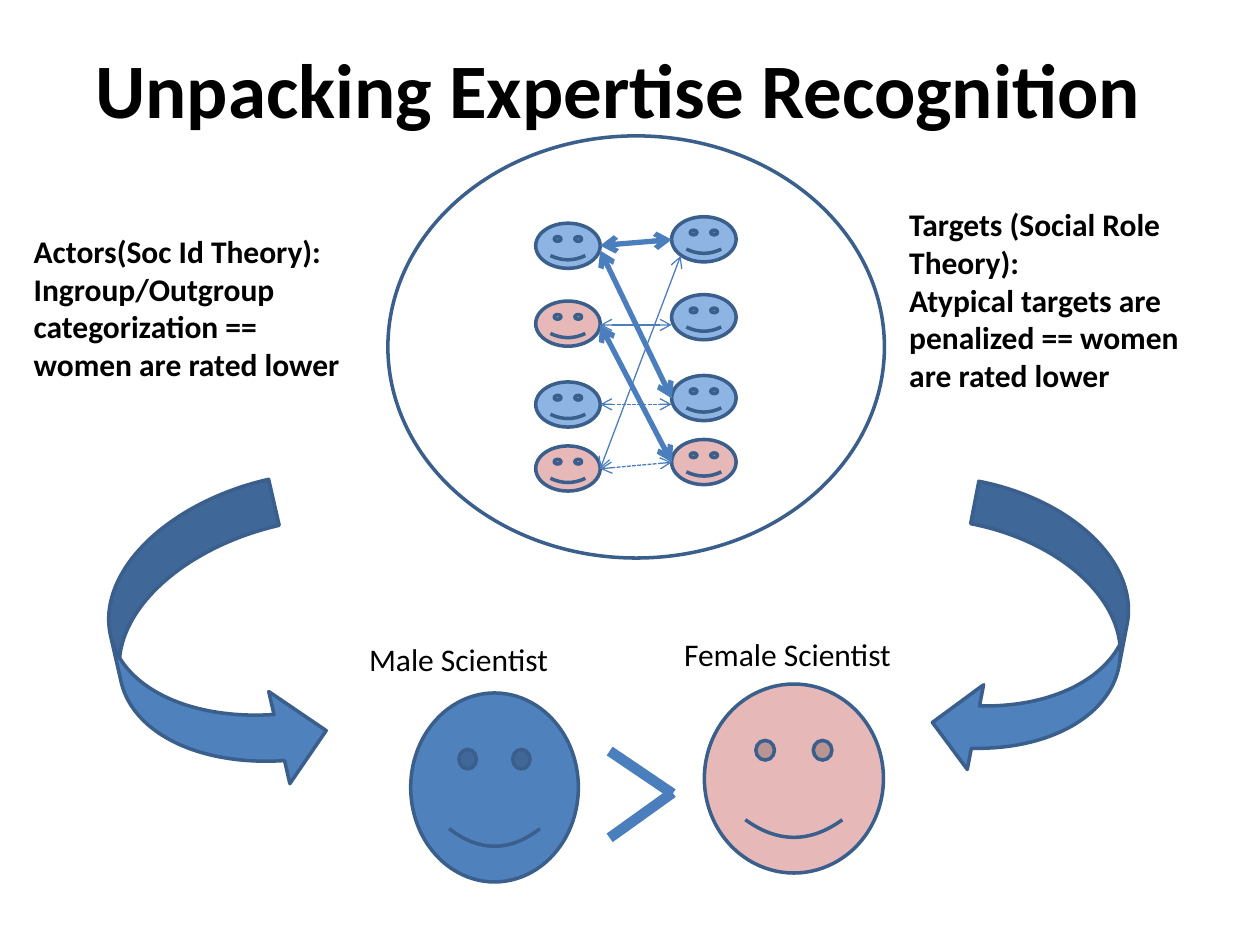
from dataclasses import dataclass

from pptx import Presentation
from pptx.dml.color import RGBColor
from pptx.enum.dml import MSO_LINE
from pptx.enum.shapes import MSO_CONNECTOR, MSO_SHAPE
from pptx.enum.text import MSO_ANCHOR, MSO_AUTO_SIZE, PP_ALIGN
from pptx.oxml.ns import qn
from pptx.util import Cm, Pt
from lxml import etree

OVAL = MSO_SHAPE.OVAL
SMILEY = MSO_SHAPE.SMILEY_FACE
RIGHT = MSO_SHAPE.CURVED_RIGHT_ARROW
LEFT = MSO_SHAPE.CURVED_LEFT_ARROW
STRAIGHT = MSO_CONNECTOR.STRAIGHT
DASH = MSO_LINE.SQUARE_DOT  # stored as sysDot; see SYS_DASH below
SYS_DASH = "sysDash"

BLACK = RGBColor(0x00, 0x00, 0x00)
BLUE = RGBColor(0x4F, 0x81, 0xBD)
SKY = RGBColor(0x8E, 0xB4, 0xE3)
PINK = RGBColor(0xE6, 0xB9, 0xB8)
EDGE = RGBColor(0x3A, 0x5F, 0x8C)
LINK = RGBColor(0x4B, 0x7E, 0xBC)
FONT = "Calibri"


@dataclass
class Box:
    x: float
    y: float
    w: float
    h: float

    def cm(self) -> tuple:
        return Cm(self.x), Cm(self.y), Cm(self.w), Cm(self.h)


@dataclass
class Tie:
    start: tuple
    end: tuple
    width: float
    dash: bool = False
    heads: bool = True


@dataclass
class Note:
    box: Box
    lines: list
    bold: bool = False
    wrap: bool = False


def add_run(para, text: str, size: float, bold: bool) -> None:
    run = para.add_run()
    run.text = text
    run.font.name = FONT
    run.font.size = Pt(size)
    run.font.bold = bold
    run.font.color.rgb = BLACK


def add_form(shapes, kind, box: Box, fill=None, turn: float = 0) -> None:
    form = shapes.add_shape(kind, *box.cm())
    form.shadow.inherit = False
    form.rotation = turn
    if fill is None:
        form.fill.background()
    else:
        form.fill.solid()
        form.fill.fore_color.rgb = fill
    form.line.color.rgb = EDGE
    form.line.width = Pt(2)


def add_tie(shapes, tie: Tie) -> None:
    ends = [Cm(v) for v in (*tie.start, *tie.end)]
    link = shapes.add_connector(STRAIGHT, *ends)
    link.line.color.rgb = LINK
    link.line.width = Pt(tie.width)
    if tie.dash:
        link.line.dash_style = DASH
    props = link._element.spPr
    line = props.find(qn("a:ln"))
    if tie.dash:
        line.find(qn("a:prstDash")).set("val", SYS_DASH)
    if tie.heads:
        for tag in ("a:headEnd", "a:tailEnd"):
            etree.SubElement(line, qn(tag)).set("type", "arrow")
    etree.SubElement(props, qn("a:effectLst"))


def add_note(shapes, note: Note) -> None:
    frame = shapes.add_textbox(*note.box.cm()).text_frame
    frame.word_wrap = note.wrap
    frame.auto_size = MSO_AUTO_SIZE.SHAPE_TO_FIT_TEXT
    for i, text in enumerate(note.lines):
        para = frame.add_paragraph() if i else frame.paragraphs[0]
        add_run(para, text, 18, note.bold)


# Network of raters: two columns of faces, the right one slightly higher
FACE_W, FACE_H = 1.3, 0.91
COL_A, COL_B = 10.8, 13.54
RISE = 0.13
ROWS = [4.5, 6.07, 7.7, 8.99]
FILLS_A = [SKY, PINK, SKY, PINK]
FILLS_B = [SKY, SKY, SKY, PINK]
EDGE_A = COL_A + FACE_W
THIN, THICK = 0.75, 3

TIES = [
    Tie((EDGE_A, 6.55), (COL_B, 6.55), THIN),
    Tie((EDGE_A, 5.05), (COL_B, 8.03), THICK),
    Tie((EDGE_A, 8.15), (COL_B, 8.15), THIN, dash=True),
    Tie((EDGE_A, 9.45), (13.72, 5.16), THIN),
    Tie((EDGE_A, 9.45), (COL_B, 9.32), THIN, dash=True),
    Tie((EDGE_A, 6.55), (COL_B, 9.32), THICK),
    Tie((EDGE_A, 4.95), (COL_B, 4.83), THICK),
]

# Greater-than sign between the two scientists
SIGN = [
    Tie((12.29, 15.14), (13.56, 16), 6, heads=False),
    Tie((13.56, 15.98), (12.29, 16.89), 6, heads=False),
]

NOTES = [
    Note(Box(0.43, 4.55, 6.78, 3.33),
         ["Actors(Soc Id Theory):",
          "Ingroup/Outgroup categorization == women are rated lower"],
         bold=True, wrap=True),
    Note(Box(7.19, 12.78, 4.32, 1.02), ["Male Scientist"]),
    Note(Box(13.54, 12.67, 4.88, 1.02), ["Female Scientist"]),
    Note(Box(18.08, 4.01, 6.68, 4.11),
         ["Targets (Social Role Theory):",
          "Atypical targets are penalized == women are rated lower"],
         bold=True, wrap=True),
]


def main() -> None:
    deck = Presentation()
    deck.slide_width, deck.slide_height = Cm(25.4), Cm(19.05)
    slide = deck.slides.add_slide(deck.slide_layouts[5])
    shapes = slide.shapes

    # Title
    title = shapes.title
    title.left, title.top, title.width, title.height = Box(
        1.27, 0.58, 22.4, 2.39).cm()
    title.text_frame.vertical_anchor = MSO_ANCHOR.MIDDLE
    para = title.text_frame.paragraphs[0]
    para.alignment = PP_ALIGN.CENTER
    add_run(para, "Unpacking Expertise Recognition", 44, True)

    # Network
    net = shapes.add_group_shape().shapes
    add_form(net, OVAL, Box(7.82, 2.74, 10.01, 8.51))
    for col, rise, fills in ((COL_A, 0, FILLS_A), (COL_B, RISE, FILLS_B)):
        for row, fill in zip(ROWS, fills):
            add_form(net, SMILEY, Box(col, row - rise, FACE_W, FACE_H), fill)
    for tie in TIES:
        add_tie(net, tie)

    # Scientists
    add_form(shapes, SMILEY, Box(8.28, 13.97, 3.38, 3.81), BLUE)
    add_form(shapes, SMILEY, Box(14.2, 13.79, 3.61, 3.81), PINK)
    for tie in SIGN:
        add_tie(shapes, tie)

    # Texts
    for note in NOTES:
        add_note(shapes, note)

    # Curved arrows
    add_form(shapes, RIGHT, Box(2.34, 10.01, 3.81, 6.15), BLUE, 347.1)
    add_form(shapes, LEFT, Box(19.15, 9.98, 3.48, 5.82), BLUE, 10.9)

    deck.save("out.pptx")


if __name__ == "__main__":
    main()
